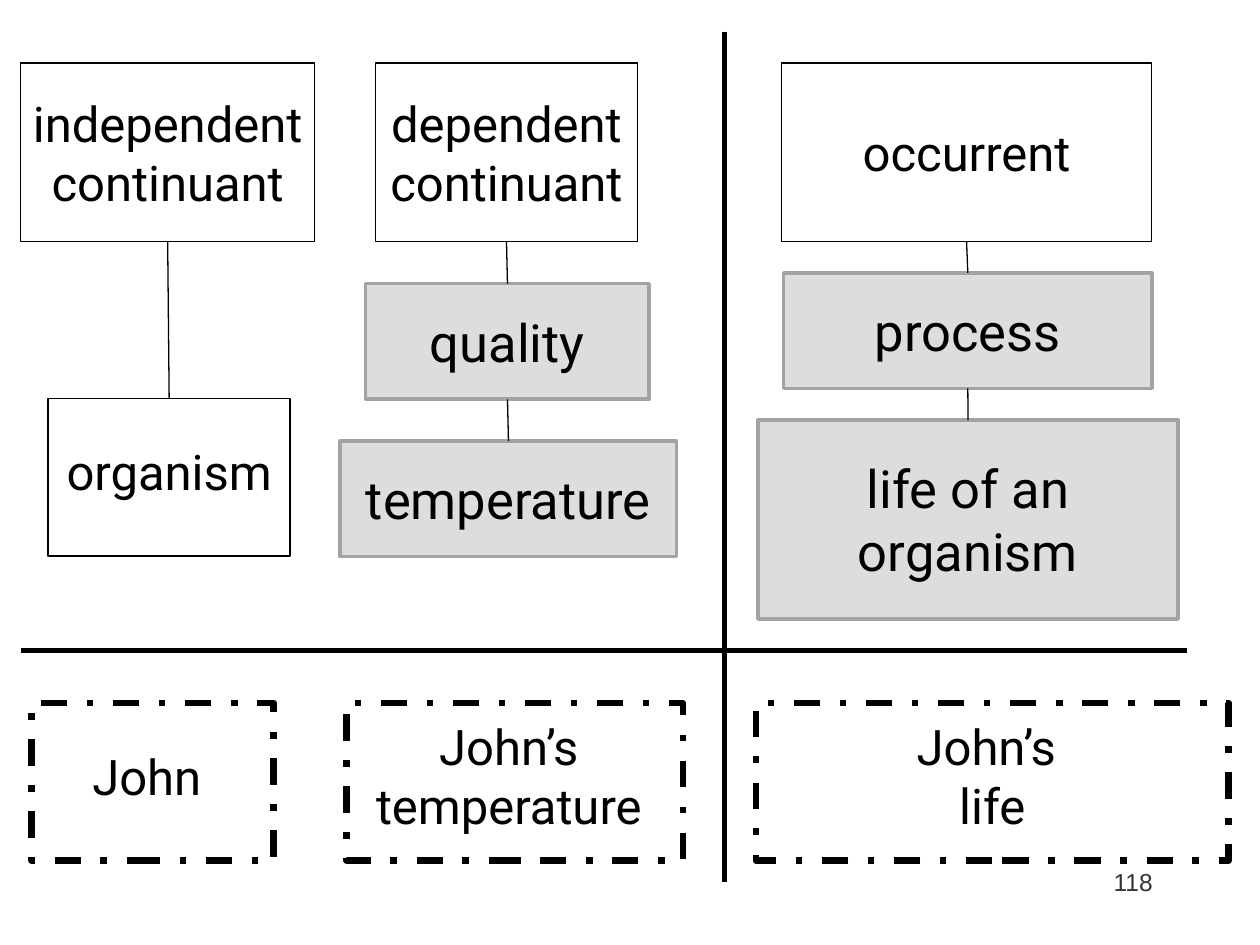
from pptx import Presentation
from pptx.dml.color import RGBColor
from pptx.enum.dml import MSO_LINE
from pptx.enum.shapes import MSO_CONNECTOR, MSO_SHAPE
from pptx.enum.text import MSO_ANCHOR, PP_ALIGN
from pptx.oxml.ns import qn
from pptx.util import Cm, Pt
from lxml.etree import SubElement


def color(value):
    return RGBColor.from_string(value)


def write(tf, text, size=28, font="Roboto", ink="000000", align=PP_ALIGN.CENTER,
          anchor=MSO_ANCHOR.MIDDLE, wrap=False, lift=0):
    tf.word_wrap = wrap
    tf.vertical_anchor = anchor
    tf.margin_bottom = Cm(0.13 + lift)
    for i, line in enumerate(text.split("\n")):
        p = tf.add_paragraph() if i else tf.paragraphs[0]
        p.alignment = align
        r = p.add_run()
        r.text = line
        r.font.size = Pt(size)
        r.font.name = font
        r.font.color.rgb = color(ink)


class Diagram:
    ink = "000000"
    fill = "DDDDDD"
    edge = "A3A3A3"

    def __init__(self, slide):
        self.slide = slide

    def box(self, text, x, y, w, h, fill=None, edge=ink, weight=0.75, dash=None, **fmt):
        sp = self.slide.shapes.add_shape(MSO_SHAPE.RECTANGLE, Cm(x), Cm(y), Cm(w), Cm(h))
        sp.shadow.inherit = False
        if fill:
            sp.fill.solid()
            sp.fill.fore_color.rgb = color(fill)
        else:
            sp.fill.background()
        sp.line.color.rgb = color(edge)
        sp.line.width = Pt(weight)
        if dash:
            sp.line.dash_style = dash
        write(sp.text_frame, text, **fmt)
        return sp

    def shaded(self, text, x, y, w, h=2.33):
        return self.box(text, x, y, w, h, fill=self.fill, edge=self.edge, weight=2,
                        size=30, wrap=True)

    def instance(self, text, x, w):
        return self.box(text, x, 14.17, w, 3.18, weight=3.75,
                        dash=MSO_LINE.DASH_DOT, lift=0.25)

    def line(self, x1, y1, x2, y2, weight=3):
        c = self.slide.shapes.add_connector(
            MSO_CONNECTOR.STRAIGHT, Cm(x1), Cm(y1), Cm(x2), Cm(y2))
        c.line.color.rgb = color(self.ink)
        c.line.width = Pt(weight)
        SubElement(c._element.spPr, qn("a:effectLst"))
        return c

    def chain(self, *boxes):
        for upper, lower in zip(boxes, boxes[1:]):
            c = self.line(0, 0, 0, 0, weight=0.75)
            c.begin_connect(upper, 2)
            c.end_connect(lower, 0)

    def label(self, text, x, y, w, h, **fmt):
        sp = self.slide.shapes.add_textbox(Cm(x), Cm(y), Cm(w), Cm(h))
        write(sp.text_frame, text, **fmt)


def main():
    prs = Presentation()
    prs.slide_width, prs.slide_height = Cm(25.4), Cm(19.05)
    s = Diagram(prs.slides.add_slide(prs.slide_layouts[6]))

    s.line(0.42, 13.12, 23.92, 13.12)
    s.line(14.6, 0.64, 14.6, 17.78)

    s.chain(s.box("independent\ncontinuant", 0.42, 1.27, 5.92, 3.6),
            s.box("organism", 0.97, 8.03, 4.88, 3.18, lift=0.25))
    s.chain(s.box("dependent\ncontinuant", 7.57, 1.27, 5.28, 3.6),
            s.shaded("quality", 7.37, 5.72, 5.72),
            s.shaded("temperature", 6.86, 8.89, 6.78))
    s.chain(s.box("occurrent", 15.75, 1.27, 7.47, 3.6),
            s.shaded("process", 15.8, 5.5, 7.42),
            s.shaded("life of an organism", 15.28, 8.47, 8.47, 4.01))

    s.instance("John ", 0.64, 4.88)
    s.instance("John’s \ntemperature ", 6.99, 6.78)
    s.instance("John’s \nlife", 15.24, 9.53)
    s.label("118", 18.21, 17.36, 5.28, 1.27, size=14, font="Arial", ink="333333",
            align=PP_ALIGN.RIGHT, anchor=MSO_ANCHOR.TOP, wrap=True)

    prs.save("out.pptx")


if __name__ == "__main__":
    main()
